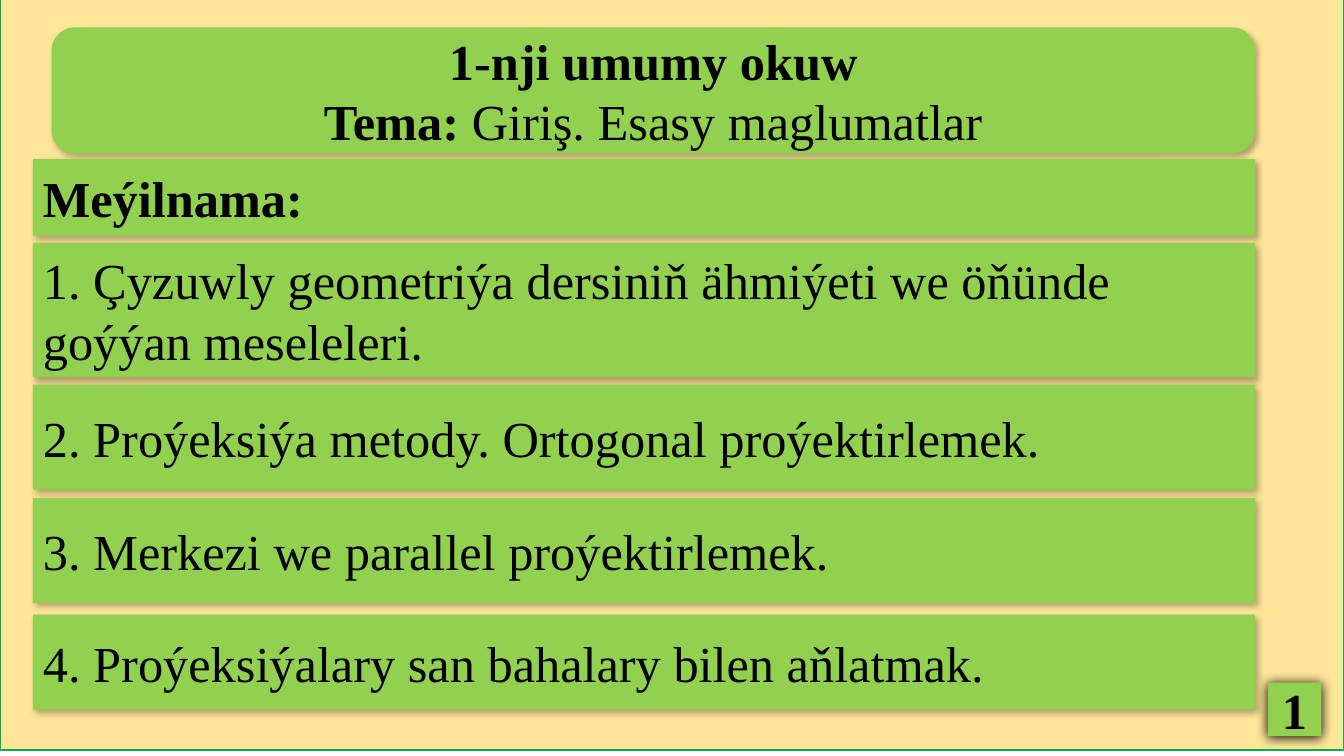
from dataclasses import dataclass
from lxml.etree import SubElement
from pptx import Presentation
from pptx.dml.color import RGBColor
from pptx.enum.shapes import MSO_SHAPE
from pptx.enum.text import MSO_ANCHOR, PP_ALIGN
from pptx.oxml.ns import qn
from pptx.util import Cm, Pt


@dataclass
class Theme:
    page: RGBColor = RGBColor(0xFF, 0xE6, 0x99)
    border: RGBColor = RGBColor(0x00, 0xB0, 0x50)
    panel: RGBColor = RGBColor(0x92, 0xD0, 0x50)
    text: RGBColor = RGBColor(0x00, 0x00, 0x00)
    shadow: str = "000000"
    font: str = "Times New Roman"
    size: Pt = Pt(36)


theme = Theme()
soft_shadow = {"blur": 4.5, "distance": 2.6, "angle": 53, "opacity": 30}
badge_shadow = {"blur": 8.5, "distance": 1, "angle": 90, "opacity": 100}

deck = Presentation()
deck.slide_width, deck.slide_height = Cm(33.87), Cm(19.05)
page = deck.slides.add_slide(deck.slide_layouts[6])


def add_box(kind, left, top, width, height, fill):
    box = page.shapes.add_shape(kind, Cm(left), Cm(top), Cm(width), Cm(height))
    box.shadow.inherit = False
    box.fill.solid()
    box.fill.fore_color.rgb = fill
    box.line.fill.background()
    return box


def add_panel(kind, frame, lines, align, shadow, adjustment=None):
    box = add_box(kind, *frame, theme.panel)
    if adjustment is not None:
        box.adjustments[0] = adjustment
    effects = box._element.spPr.find(qn("a:effectLst"))
    outer = SubElement(effects, qn("a:outerShdw"), {
        "blurRad": str(Pt(shadow["blur"])),
        "dist": str(Pt(shadow["distance"])),
        "dir": str(shadow["angle"] * 60000),
        "algn": "ctr",
        "rotWithShape": "0",
    })
    color = SubElement(outer, qn("a:srgbClr"), val=theme.shadow)
    SubElement(color, qn("a:alpha"), val=str(shadow["opacity"] * 1000))
    frame_format = {"word_wrap": True, "vertical_anchor": MSO_ANCHOR.MIDDLE}
    for name, value in frame_format.items():
        setattr(box.text_frame, name, value)
    for index, line in enumerate(lines):
        para = box.text_frame.add_paragraph() if index else box.text_frame.paragraphs[0]
        para.alignment = align
        for text, bold in line:
            span = para.add_run()
            span.text = text
            span.font.color.rgb = theme.text
            span_format = {"name": theme.font, "size": theme.size, "bold": bold}
            for name, value in span_format.items():
                setattr(span.font, name, value)


background = add_box(MSO_SHAPE.RECTANGLE, 0, -0.15, 33.87, 19.05, theme.page)
background.line.color.rgb = theme.border
background.line.width = Pt(2)

title = [
    [("1-nji umumy okuw", True)],
    [("Tema: ", True), ("Giriş. Esasy maglumatlar", False)],
]
add_panel(MSO_SHAPE.ROUNDED_RECTANGLE, (1.3, 0.69, 30.33, 3.18), title,
          PP_ALIGN.CENTER, soft_shadow, 0.184)

agenda = [
    (4.01, 1.93, "Meýilnama:", True, PP_ALIGN.LEFT),
    (6.12, 3.38, "1. Çyzuwly geometriýa dersiniň ähmiýeti we öňünde goýýan meseleleri.",
     False, PP_ALIGN.LEFT),
    (9.7, 2.64, "2. Proýeksiýa metody. Ortogonal proýektirlemek.", False, PP_ALIGN.LEFT),
    (12.55, 2.64, "3. Merkezi we parallel proýektirlemek.", False, PP_ALIGN.JUSTIFY),
    (15.49, 2.39, "4. Proýeksiýalary san bahalary bilen aňlatmak.", False, PP_ALIGN.JUSTIFY),
]
for top, height, text, bold, align in agenda:
    add_panel(MSO_SHAPE.PENTAGON, (0.83, top, 30.8, height), [[(text, bold)]],
              align, soft_shadow, 0)

add_panel(MSO_SHAPE.RECTANGLE, (31.95, 17.2, 1.35, 1.35), [[("1", True)]],
          PP_ALIGN.CENTER, badge_shadow)

deck.save("out.pptx")
